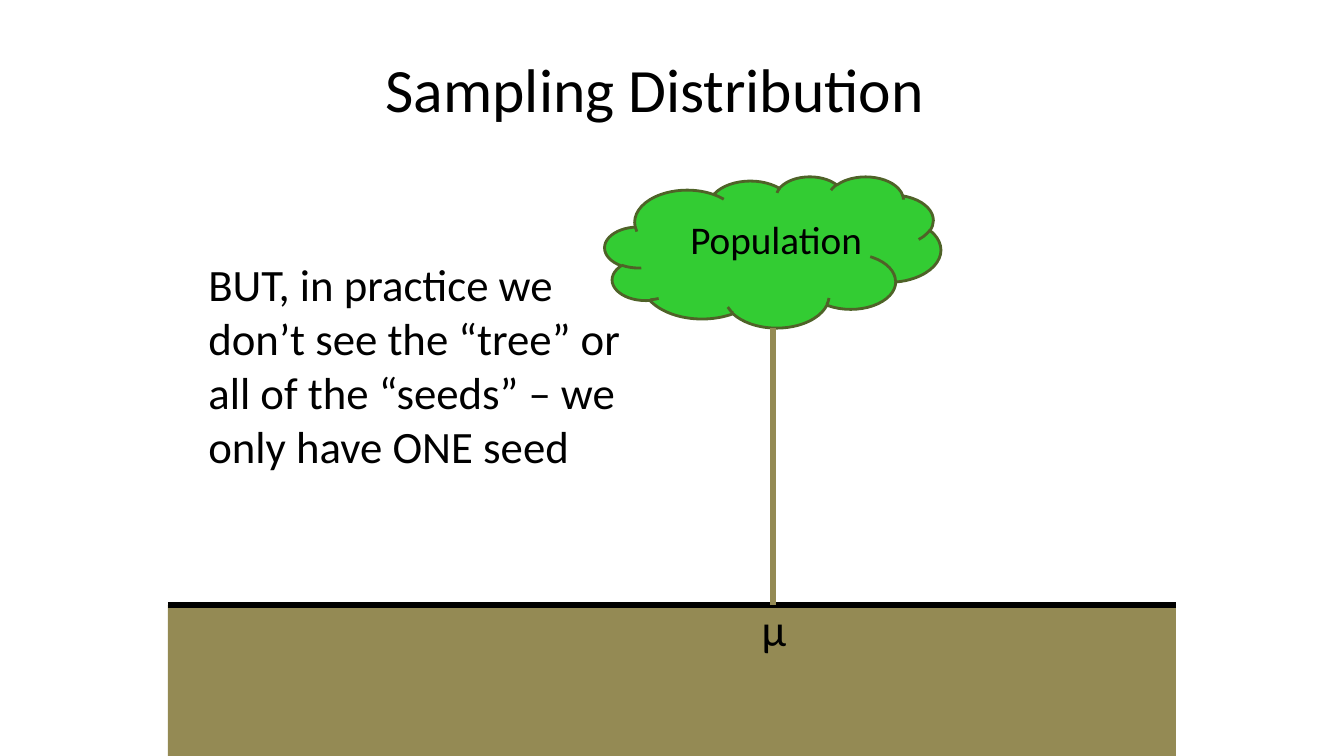
from pptx import Presentation
from pptx import util as u
from pptx.dml.color import RGBColor
from pptx.enum import shapes, text
from pptx.oxml.ns import qn
from lxml import etree

EMU_PER_PX = 9525
COLORS = {
    "ink": "000000",
    "paper": "FFFFFF",
    "soil": "948A54",
    "leaf": "33CC33",
    "leaf_edge": "4F6228",
}


def px(value):
    return u.Emu(value * EMU_PER_PX)


def color(name):
    return RGBColor.from_string(COLORS[name])


def write(frame, words, size=32, ink="ink", font="Calibri",
          align=text.PP_ALIGN.LEFT, anchor=text.MSO_ANCHOR.TOP):
    frame.word_wrap = True
    frame.vertical_anchor = anchor
    para = frame.paragraphs[0]
    para.alignment = align
    span = para.add_run()
    span.text = words
    span.font.size = u.Pt(size)
    span.font.name = font
    span.font.color.rgb = color(ink)


class TreeSlide:
    def __init__(self, deck):
        self.page = deck.slides.add_slide(deck.slide_layouts[5])
        self.page.background.fill.solid()
        self.page.background.fill.fore_color.rgb = color("paper")

    def title(self, words, left, top, width, height):
        box = self.page.shapes.title
        box.left, box.top = px(left), px(top)
        box.width, box.height = px(width), px(height)
        write(box.text_frame, words, size=44,
              align=text.PP_ALIGN.CENTER, anchor=text.MSO_ANCHOR.MIDDLE)

    def shape(self, kind, left, top, width, height, fill, edge=None):
        shape = self.page.shapes.add_shape(
            kind, px(left), px(top), px(width), px(height))
        shape.shadow.inherit = False
        shape.fill.solid()
        shape.fill.fore_color.rgb = color(fill)
        if edge:
            shape.line.color.rgb = color(edge)
            shape.line.width = u.Pt(2)
        else:
            shape.line.fill.background()

    def line(self, x1, y1, x2, y2, ink):
        line = self.page.shapes.add_connector(
            shapes.MSO_CONNECTOR.STRAIGHT, px(x1), px(y1), px(x2), px(y2))
        line.line.color.rgb = color(ink)
        line.line.width = u.Pt(4.5)
        etree.SubElement(line._element.spPr, qn("a:effectLst"))

    def label(self, words, left, top, width, height, **style):
        box = self.page.shapes.add_textbox(
            px(left), px(top), px(width), px(height))
        box.text_frame.auto_size = text.MSO_AUTO_SIZE.SHAPE_TO_FIT_TEXT
        write(box.text_frame, words, **style)


def main():
    deck = Presentation()
    deck.slide_width, deck.slide_height = px(1280), px(720)
    slide = TreeSlide(deck)

    ground, trunk, left, right = 576, 736, 160, 1120
    slide.shape(shapes.MSO_SHAPE.RECTANGLE, left, ground,
                right - left, 720 - ground, "soil")
    slide.title("Sampling Distribution", 192, 24, 864, 120)
    slide.line(left, ground, right, ground, "ink")
    slide.shape(shapes.MSO_SHAPE.CLOUD, 576, 168, 320, 144,
                "leaf", edge="leaf_edge")
    slide.label("Population", 648, 200, 192, 55, size=28)
    slide.line(trunk, 312, trunk, ground, "soil")
    slide.label("µ", 716, 568, 56, 61)
    slide.label("BUT, in practice we don’t see the “tree” or all of the "
                "“seeds” – we only have ONE seed", 189, 240, 424, 217)

    deck.save("out.pptx")


if __name__ == "__main__":
    main()
